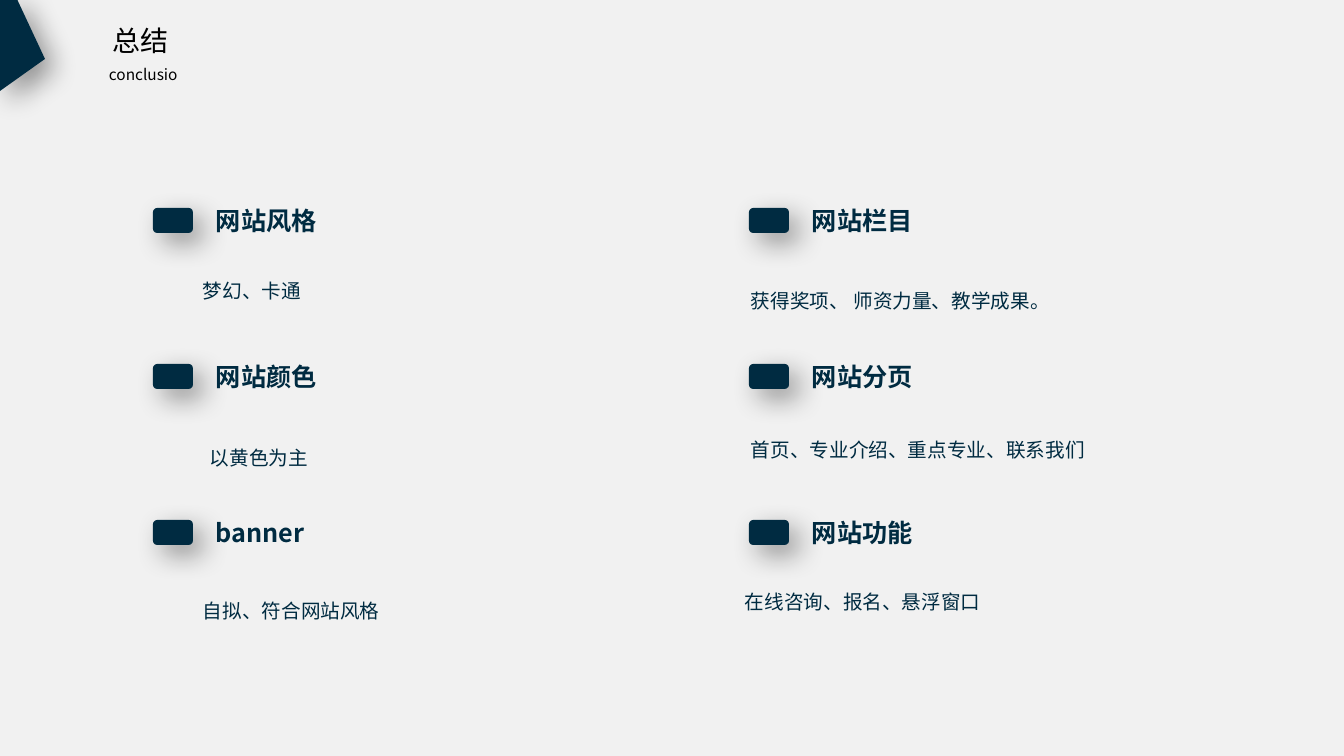
from dataclasses import dataclass
from lxml.etree import SubElement
from pptx import Presentation
from pptx.dml.color import RGBColor as RGB
from pptx.enum.shapes import MSO_SHAPE as Shape
from pptx.enum.text import MSO_AUTO_SIZE as Fit, PP_ALIGN as Align
from pptx.oxml import parse_xml
from pptx.oxml.ns import nsdecls, qn
from pptx.util import Pt

PX = 914400 / 100.8


@dataclass(frozen=True)
class Theme:
    font: str = "Noto Sans CJK SC"
    back: RGB = RGB(0xF1, 0xF1, 0xF1)
    navy: RGB = RGB(0x00, 0x2B, 0x41)
    black: RGB = RGB(0, 0, 0)
    title: int = 20
    head: int = 18
    body: int = 14
    sub: int = 11


theme = Theme()
deck = Presentation()
deck.slide_width, deck.slide_height = int(1344 * PX), int(756 * PX)
slide = deck.slides.add_slide(deck.slide_layouts[6])
slide.background.fill.solid()
slide.background.fill.fore_color.rgb = theme.back


def write(text, rect, size, color, bold=False, wrap=True, space=None, align=Align.LEFT):
    box = slide.shapes.add_textbox(*[int(n * PX) for n in rect])
    frame = box.text_frame
    frame.text = text
    frame.word_wrap = wrap
    frame.auto_size = Fit.SHAPE_TO_FIT_TEXT
    para = frame.paragraphs[0]
    para.alignment = align
    para.line_spacing = space
    font = para.runs[0].font
    font.name, font.size, font.bold = theme.font, Pt(size), bold
    font.color.rgb = color
    SubElement(para.runs[0]._r.get_or_add_rPr(), qn("a:ea"), typeface=theme.font)


def paint(shape):
    shape.fill.solid()
    shape.fill.fore_color.rgb = theme.navy
    shape.line.fill.background()
    shape._element.spPr.append(parse_xml(
        f'<a:effectLst {nsdecls("a")}>'
        f'<a:outerShdw blurRad="{Pt(20)}" dist="{Pt(10)}" dir="2700000" algn="tl" rotWithShape="0">'
        '<a:srgbClr val="000000"><a:alpha val="40000"/></a:srgbClr>'
        '</a:outerShdw></a:effectLst>'))


write("总结", (28, 19, 225, 44), theme.title, theme.black, align=Align.CENTER)
write("conclusio", (99, 55, 308, 34), theme.sub, theme.black, space=1.3)

pen = slide.shapes.build_freeform(17, -1, scale=PX)
pen.add_line_segments([(0, -1), (0, 91), (45, 59)], close=True)
paint(pen.convert_to_shape())

topics = [
    ("网站风格", "梦幻、卡通", 193, 267),
    ("网站栏目", "获得奖项、 师资力量、教学成果。", 741, 277),
    ("网站颜色", "以黄色为主", 200, 434),
    ("网站分页", "首页、专业介绍、重点专业、联系我们", 741, 426),
    ("banner", "自拟、符合网站风格", 193, 587),
    ("网站功能", "在线咨询、报名、悬浮窗口", 735, 578),
]
for i, (head, body, left, top) in enumerate(topics):
    row, col = divmod(i, 2)
    x, y = 153 + 596 * col, 208 + 156 * row
    tag = [int(n * PX) for n in (x, y, 40, 25)]
    paint(slide.shapes.add_shape(Shape.ROUNDED_RECTANGLE, *tag))
    write(head, (x + 53, y - 8, 121, 40), theme.head, theme.navy, bold=True, wrap=False)
    write(body, (left, top, 510, 41), theme.body, theme.navy, space=1.3)

deck.save("out.pptx")
